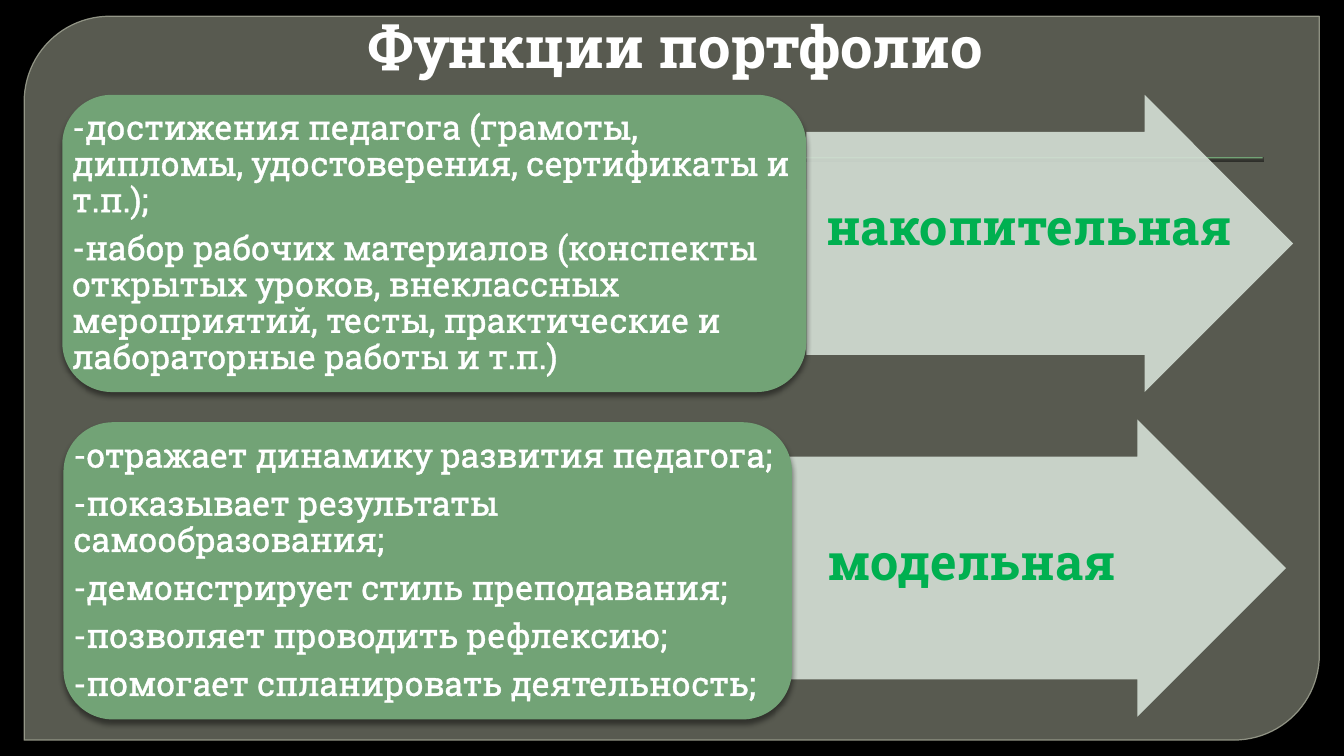
import pptx
import pptx.util
import pptx.dml.color
import pptx.enum.shapes
import pptx.enum.text
from lxml import etree
from pptx.oxml.ns import qn

Cm, Pt = pptx.util.Cm, pptx.util.Pt
RGB = pptx.dml.color.RGBColor
SHAPE = pptx.enum.shapes.MSO_SHAPE
ALIGN = pptx.enum.text.PP_ALIGN
ANCHOR = pptx.enum.text.MSO_ANCHOR

TITLE = "Функции портфолио"
# Each function: name, its points, then left, top, width, height in cm
FUNCTIONS = [
    {
        "name": "накопительная",
        "points": [
            "-достижения педагога (грамоты, дипломы, удостоверения, сертификаты и т.п.);",
            "-набор рабочих материалов (конспекты открытых уроков, внеклассных "
            "мероприятий, тесты, практические и лабораторные работы и т.п.)",
        ],
        "card": (1.57, 2.39, 18.75, 7.49),
        "arrow": (20.32, 2.39, 12.27, 7.49),
        "label": (20.57, 4.8, 10.77, 1.8),
    },
    {
        "name": "модельная",
        "points": [
            "-отражает динамику развития педагога;",
            "-показывает результаты самообразования;",
            "-демонстрирует стиль преподавания;",
            "-позволяет проводить рефлексию;",
            "-помогает спланировать деятельность;",
        ],
        "card": (1.6, 10.64, 18.36, 7.49),
        "arrow": (19.81, 10.57, 12.6, 7.49),
        "label": (20.6, 13.23, 9.6, 1.8),
    },
]

FONT = "Roboto Slab"
BLACK = RGB(0x00, 0x00, 0x00)
WHITE = RGB(0xFF, 0xFF, 0xFF)
PANEL = RGB(0x88, 0x8B, 0x7B)
PANEL_EDGE = RGB(0x9D, 0xA0, 0x90)
GREEN = RGB(0x72, 0xA3, 0x76)
PALE_GREEN = RGB(0xD5, 0xE0, 0xD6)
LABEL_GREEN = RGB(0x00, 0xB0, 0x50)


def set_alpha(color_format, percent):
    color = color_format._xFill.find(qn("a:srgbClr"))
    etree.SubElement(color, qn("a:alpha"), val=str(percent * 1000))


def add_shadow(shape, alpha, blur, distance):
    """Cast a black shadow straight down; blur and distance are in points."""
    effects = shape._element.spPr.find(qn("a:effectLst"))
    shadow = etree.SubElement(
        effects, qn("a:outerShdw"), blurRad=str(Pt(blur)), dist=str(Pt(distance)),
        dir="5400000", algn="ctr", rotWithShape="0")
    color = etree.SubElement(shadow, qn("a:srgbClr"), val=str(BLACK))
    etree.SubElement(color, qn("a:alpha"), val=str(alpha * 1000))


def add_block(slide, kind, box, fill, alpha=100, adjustments=()):
    block = slide.shapes.add_shape(kind, *map(Cm, box))
    block.shadow.inherit = False
    block.fill.solid()
    block.fill.fore_color.rgb = fill
    if alpha < 100:
        set_alpha(block.fill.fore_color, alpha)
    block.line.fill.background()
    for index, value in enumerate(adjustments):
        block.adjustments[index] = value
    return block


def add_text(slide, lines, box, size, color, bold=False, align=ALIGN.LEFT,
             anchor=ANCHOR.TOP, line_spacing=None, space_after=0, outline=None):
    frame = slide.shapes.add_textbox(*map(Cm, box)).text_frame
    frame.word_wrap = True
    frame.vertical_anchor = anchor
    for index, line in enumerate(lines):
        paragraph = frame.paragraphs[0] if index == 0 else frame.add_paragraph()
        paragraph.alignment = align
        paragraph.line_spacing = line_spacing
        paragraph.space_after = Pt(space_after)
        run = paragraph.add_run()
        run.text = line
        run.font.name = FONT
        run.font.size = Pt(size)
        run.font.bold = bold
        run.font.color.rgb = color
        if outline:
            edge = etree.Element(qn("a:ln"), w=str(Pt(outline)))
            fill = etree.SubElement(edge, qn("a:solidFill"))
            etree.SubElement(fill, qn("a:srgbClr"), val=str(color))
            run.font._element.insert(0, edge)


def add_function(slide, function):
    add_block(slide, SHAPE.RIGHT_ARROW, function["arrow"], PALE_GREEN, 90, (0.75, 0.5))
    card = add_block(slide, SHAPE.ROUNDED_RECTANGLE, function["card"], GREEN)
    add_shadow(card, alpha=43, blur=4, distance=3)
    add_text(slide, function["points"], function["card"], 24, WHITE,
             anchor=ANCHOR.MIDDLE, line_spacing=0.9, space_after=8.4, outline=1.45)
    add_text(slide, [function["name"]], function["label"], 36, LABEL_GREEN, bold=True)


def main():
    deck = pptx.Presentation()
    deck.slide_width, deck.slide_height = Cm(33.87), Cm(19.05)
    slide = deck.slides.add_slide(deck.slide_layouts[6])
    slide.background.fill.solid()
    slide.background.fill.fore_color.rgb = BLACK

    panel = add_block(slide, SHAPE.ROUND_2_DIAG_RECTANGLE, (0.61, 0.41, 32.64, 18.24),
                      PANEL, 65, (0.118, 0))
    panel.line.color.rgb = PANEL_EDGE
    panel.line.width = Pt(0.87)
    set_alpha(panel.line.color, 88)

    rule = add_block(slide, SHAPE.RECTANGLE, (2.18, 3.96, 29.64, 0.03), GREEN)
    add_shadow(rule, alpha=75, blur=1, distance=1)

    add_text(slide, [TITLE], (1.78, 0.13, 30.48, 2), 41.4, WHITE,
             bold=True, align=ALIGN.CENTER)
    for function in FUNCTIONS:
        add_function(slide, function)
    deck.save("out.pptx")


if __name__ == "__main__":
    main()
